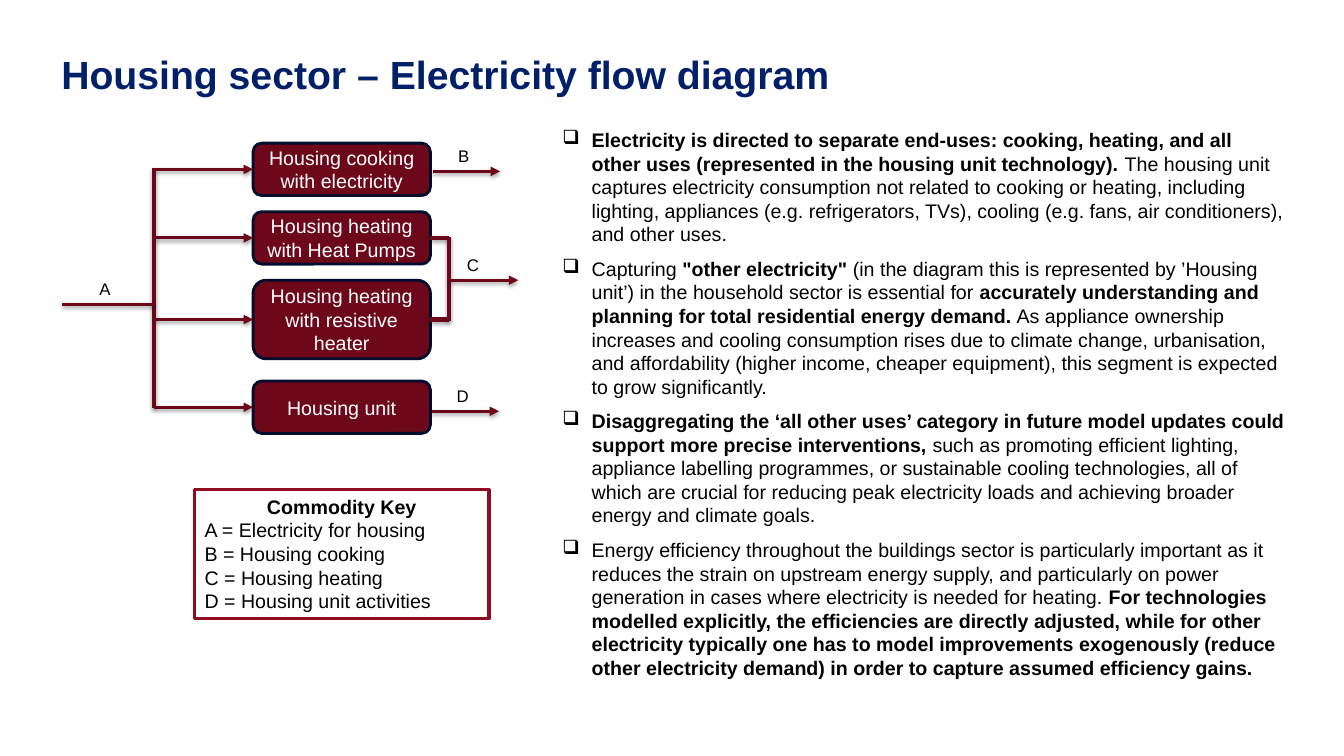
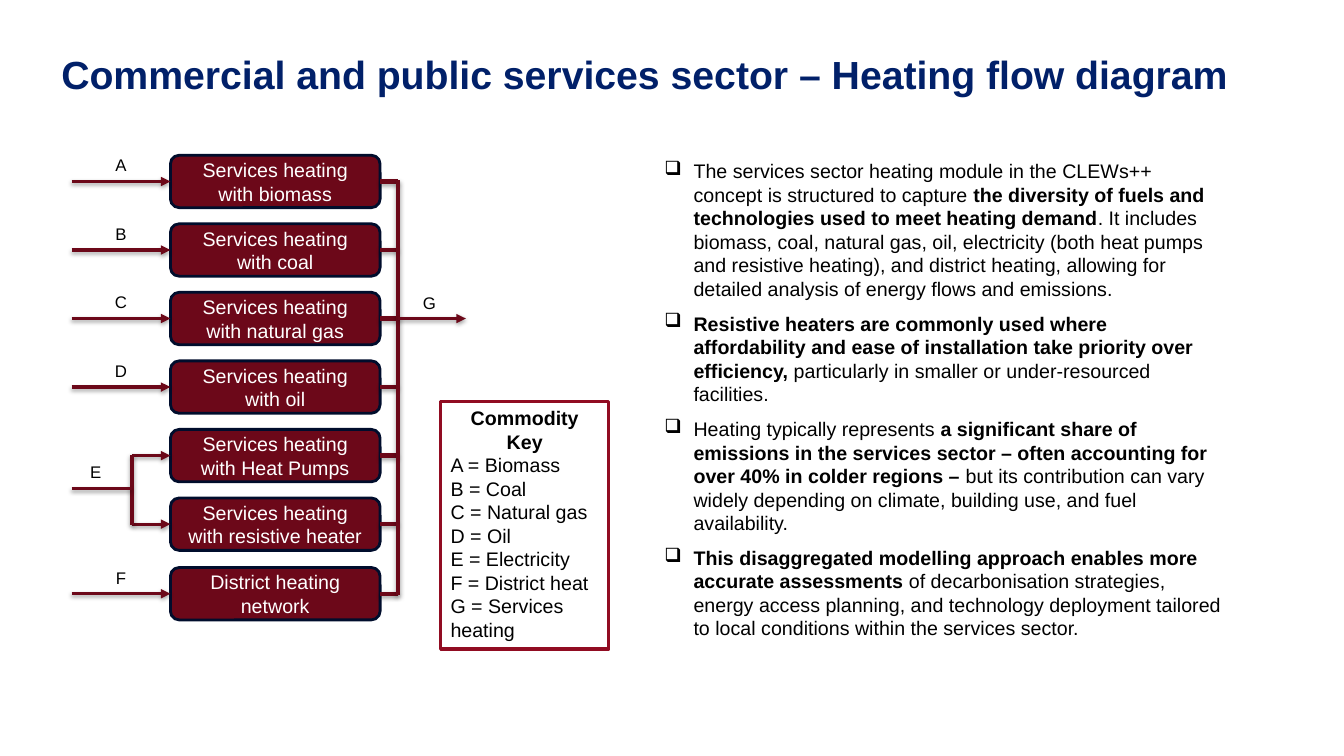
from dataclasses import dataclass
from typing import Optional

from lxml import etree
from pptx import Presentation
from pptx.dml.color import RGBColor
from pptx.enum.shapes import MSO_CONNECTOR, MSO_SHAPE
from pptx.enum.text import MSO_ANCHOR, MSO_AUTO_SIZE, PP_ALIGN
from pptx.oxml.ns import qn
from pptx.shapes.autoshape import Shape
from pptx.slide import Slide
from pptx.text.text import Font
from pptx.util import Emu, Pt

STRAIGHT = MSO_CONNECTOR.STRAIGHT
RECTANGLE, ROUNDED = MSO_SHAPE.RECTANGLE, MSO_SHAPE.ROUNDED_RECTANGLE
TOP, MIDDLE, BOTTOM = MSO_ANCHOR.TOP, MSO_ANCHOR.MIDDLE, MSO_ANCHOR.BOTTOM
CENTER, LEFT = PP_ALIGN.CENTER, PP_ALIGN.LEFT
GROW = MSO_AUTO_SIZE.SHAPE_TO_FIT_TEXT

# Shared style: 100 px to the inch
EMU_PER_PX = 9144
FONT = "Arial"
NAVY, BLACK, WHITE = "012069", "000000", "FFFFFF"
MAROON, BOX_EDGE, KEY_EDGE = "6C0819", "000D2C", "910C22"
LEFT_SIDE, RIGHT_SIDE = 1, 3
THIN, THICK = 2.25, 3
BOX_HEIGHT = 52
BULLET_INDENT = 29
KEY_TITLE = "Commodity Key"


@dataclass(frozen=True)
class Area:
    left: int
    top: int
    width: int
    height: int

    @property
    def right(self) -> int:
        return self.left + self.width

    @property
    def middle(self) -> int:
        return self.top + self.height // 2


@dataclass(frozen=True)
class Span:
    text: str
    bold: bool = False


@dataclass(frozen=True)
class Technology:
    name: str
    area: Area


@dataclass(frozen=True)
class Wire:
    start: tuple[int, int]
    end: tuple[int, int]
    arrow: bool = False
    weight: float = THIN


@dataclass(frozen=True)
class Label:
    text: str
    left: int
    top: int


def px(length: int) -> Emu:
    return Emu(length * EMU_PER_PX)


def color(value: str) -> RGBColor:
    return RGBColor.from_string(value)


def place(area: Area) -> tuple[Emu, Emu, Emu, Emu]:
    return px(area.left), px(area.top), px(area.width), px(area.height)


def style(font: Font, size: int, ink: str, bold: bool = False) -> None:
    font.name = FONT
    font.size = Pt(size)
    font.bold = bold
    font.color.rgb = color(ink)


def set_text(shape: Shape, text: str, size: int, ink: str, align: PP_ALIGN,
             anchor: MSO_ANCHOR, bold: bool = False) -> None:
    frame = shape.text_frame
    frame.word_wrap = True
    frame.vertical_anchor = anchor
    frame.text = text
    for para in frame.paragraphs:
        para.alignment = align
        for run in para.runs:
            style(run.font, size, ink, bold)


def add_title(page: Slide, text: str) -> None:
    title = page.shapes.add_textbox(*place(Area(51, 31, 1191, 71)))
    set_text(title, text, 28, NAVY, LEFT, BOTTOM, bold=True)
    title.text_frame.paragraphs[0].line_spacing = 0.9


def add_bullets(page: Slide, area: Area, points: list[list[Span]]) -> None:
    frame = page.shapes.add_textbox(*place(area)).text_frame
    frame.word_wrap = True
    frame.auto_size = GROW
    for index, point in enumerate(points):
        para = frame.paragraphs[0] if index == 0 else frame.add_paragraph()
        properties = para._p.get_or_add_pPr()
        properties.set("marL", str(px(BULLET_INDENT)))
        properties.set("indent", str(-px(BULLET_INDENT)))
        bullet_color = etree.SubElement(properties, qn("a:buClr"))
        etree.SubElement(bullet_color, qn("a:srgbClr"), val=BLACK)
        etree.SubElement(properties, qn("a:buChar"), char="❑")
        if index:
            para.space_before = Pt(8)
        for span in point:
            run = para.add_run()
            run.text = span.text
            style(run.font, 14, BLACK, span.bold)


def add_technology(page: Slide, technology: Technology) -> Shape:
    box = page.shapes.add_shape(ROUNDED, *place(technology.area))
    box.shadow.inherit = False
    box.fill.solid()
    box.fill.fore_color.rgb = color(MAROON)
    box.line.color.rgb = color(BOX_EDGE)
    box.line.width = Pt(2)
    set_text(box, technology.name, 14, WHITE, CENTER, MIDDLE)
    return box


def add_wire(page: Slide, wire: Wire, target: Optional[Shape] = None,
             side: int = LEFT_SIDE) -> None:
    x1, y1, x2, y2 = (px(value) for value in wire.start + wire.end)
    line = page.shapes.add_connector(STRAIGHT, x1, y1, x2, y2)
    line.line.color.rgb = color(MAROON)
    line.line.width = Pt(wire.weight)
    if wire.arrow:
        etree.SubElement(line.line._get_or_add_ln(), qn("a:tailEnd"), type="triangle")
    # Soft shadow straight below the line
    effects = etree.SubElement(line._element.spPr, qn("a:effectLst"))
    shadow = etree.SubElement(effects, qn("a:outerShdw"), blurRad=str(Pt(3.1)),
                              dist=str(Pt(1.6)), dir="5400000", rotWithShape="0")
    shade = etree.SubElement(shadow, qn("a:srgbClr"), val=BLACK)
    etree.SubElement(shade, qn("a:alpha"), val="37000")
    if target is not None:
        line.end_connect(target, side)


def add_label(page: Slide, label: Label) -> None:
    box = page.shapes.add_textbox(*place(Area(label.left, label.top, 72, 30)))
    set_text(box, label.text, 12, BLACK, CENTER, TOP)
    box.text_frame.auto_size = GROW


def add_key(page: Slide, area: Area, entries: list[str]) -> None:
    key = page.shapes.add_shape(RECTANGLE, *place(area))
    key.shadow.inherit = False
    key.fill.background()
    key.line.color.rgb = color(KEY_EDGE)
    key.line.width = Pt(THIN)
    set_text(key, "\n".join([KEY_TITLE, *entries]), 14, BLACK, LEFT, TOP)
    key.text_frame.auto_size = GROW
    heading = key.text_frame.paragraphs[0]
    heading.alignment = CENTER
    heading.runs[0].font.bold = True


def add_bus(page: Slide, x: int, first: Area, last: Area) -> None:
    add_wire(page, Wire((x, first.middle - 1), (x, last.middle + 1), weight=THICK))


def add_input(page: Slide, x: int, area: Area, box: Shape) -> None:
    add_wire(page, Wire((x, area.middle), (area.left, area.middle), arrow=True), box)


def add_stub(page: Slide, x: int, area: Area, box: Shape) -> None:
    wire = Wire((x, area.middle), (area.right, area.middle), weight=THICK)
    add_wire(page, wire, box, RIGHT_SIDE)


def build_housing(page: Slide) -> None:
    add_title(page, "Housing sector – Electricity flow diagram")
    add_bullets(page, Area(548, 122, 737, 562), [
        [Span("Electricity is directed to separate end-uses: cooking, heating, and all other uses "
              "(represented in the housing unit technology). ", True),
         Span("The housing unit captures electricity consumption not related to cooking or heating, "
              "including lighting, appliances (e.g. refrigerators, TVs), cooling (e.g. fans, air "
              "conditioners), and other uses.")],
        [Span("Capturing "), Span('"other electricity"', True),
         Span(" (in the diagram this is represented by ’Housing unit’) in the household sector is "
              "essential for "),
         Span("accurately understanding and planning for total residential energy demand.", True),
         Span(" As appliance ownership increases and cooling consumption rises due to climate "
              "change, urbanisation, and affordability (higher income, cheaper equipment), this "
              "segment is expected to grow significantly.")],
        [Span("Disaggregating the ‘all other uses’ category in future model updates could support "
              "more precise interventions,", True),
         Span(" such as promoting efficient lighting, appliance labelling programmes, or sustainable "
              "cooling technologies, all of which are crucial for reducing peak electricity loads "
              "and achieving broader energy and climate goals.")],
        [Span("Energy efficiency throughout the buildings sector is particularly important as it "
              "reduces the strain on upstream energy supply, and particularly on power generation "
              "in cases where electricity is needed for heating. "),
         Span("For technologies modelled explicitly, the efficiencies are directly adjusted, while "
              "for other electricity typically one has to model improvements exogenously (reduce "
              "other electricity demand) in order to capture assumed efficiency gains.", True)],
    ])

    # Technologies fed by one electricity bus
    technologies = [Technology(name, Area(251, top, 176, height)) for name, top, height in (
        ("Housing cooking with electricity", 142, BOX_HEIGHT),
        ("Housing heating with Heat Pumps", 210, BOX_HEIGHT),
        ("Housing heating with resistive heater", 278, 78),
        ("Housing unit", 378, BOX_HEIGHT))]
    areas = [technology.area for technology in technologies]
    boxes = [add_technology(page, technology) for technology in technologies]
    supply_x, heating_x = 153, 445
    for area, box in zip(areas, boxes):
        add_input(page, supply_x, area, box)
    add_bus(page, supply_x, areas[0], areas[-1])
    add_wire(page, Wire((62, 302), (supply_x, 302)))

    # Outputs, with both heaters merged
    for area, box in zip(areas[1:3], boxes[1:3]):
        add_stub(page, heating_x, area, box)
    add_bus(page, heating_x, areas[1], areas[2])
    for x, y in ((429, 170), (447, 278), (428, 408)):
        add_wire(page, Wire((x, y), (x + 67, y), arrow=True))
    for label in (Label("A", 68, 272), Label("B", 424, 140),
                  Label("C", 433, 248), Label("D", 423, 378)):
        add_label(page, label)
    add_key(page, Area(193, 486, 292, 128), [
        "A = Electricity for housing", "B = Housing cooking",
        "C = Housing heating", "D = Housing unit activities"])


def build_services(page: Slide) -> None:
    add_title(page, "Commercial and public services sector – Heating flow diagram")
    add_bullets(page, Area(649, 153, 575, 492), [
        [Span("The services sector heating module in the CLEWs++ concept is structured to capture "),
         Span("the diversity of fuels and technologies used to meet heating demand", True),
         Span(". It includes biomass, coal, natural gas, oil, electricity (both heat pumps and "
              "resistive heating), and district heating, allowing for detailed analysis of energy "
              "flows and emissions.")],
        [Span("Resistive heaters are commonly used where affordability and ease of installation "
              "take priority over efficiency,", True),
         Span(" particularly in smaller or under-resourced facilities.")],
        [Span("Heating typically represents "),
         Span("a significant share of emissions in the services sector – often accounting for over "
              "40% in colder regions – ", True),
         Span("but its contribution can vary widely depending on climate, building use, and fuel "
              "availability.")],
        [Span("This disaggregated modelling approach enables more accurate assessments", True),
         Span(" of decarbonisation strategies, energy access planning, and technology deployment "
              "tailored to local conditions within the services sector.")],
    ])
    add_key(page, Area(437, 398, 167, 246), [
        "A = Biomass", "B = Coal", "C = Natural gas", "D = Oil",
        "E = Electricity", "F = District heat", "G = Services heating"])

    # Seven evenly spaced technologies, all feeding the heating bus
    names = ("Services heating with biomass", "Services heating with coal",
             "Services heating with natural gas", "Services heating with oil",
             "Services heating with Heat Pumps", "Services heating with resistive heater",
             "District heating network")
    first_top, last_top = 154, 563
    steps = len(names) - 1
    areas = [Area(169, first_top + index * (last_top - first_top) // steps, 208, BOX_HEIGHT)
             for index in range(len(names))]
    inputs = ("A", "B", "C", "D", None, None, "F")
    supply_x, split_x, heating_x = 71, 131, 395
    for name, area, letter in zip(names, areas, inputs):
        box = add_technology(page, Technology(name, area))
        add_input(page, supply_x if letter else split_x, area, box)
        add_stub(page, heating_x, area, box)
        if letter:
            add_label(page, Label(letter, 84, area.top - 5))
    add_bus(page, heating_x, areas[0], areas[-1])
    add_wire(page, Wire((heating_x, 316), (462, 316), arrow=True))
    add_label(page, Label("G", 390, 286))

    # Electricity split between the two electric heaters
    add_bus(page, split_x, areas[4], areas[5])
    add_wire(page, Wire((supply_x, 485), (split_x, 485)))
    add_label(page, Label("E", 59, 453))


def main() -> None:
    deck = Presentation()
    deck.slide_width, deck.slide_height = px(1333), px(750)
    blank = deck.slide_layouts[6]
    for build in (build_housing, build_services):
        build(deck.slides.add_slide(blank))
    deck.save("out.pptx")


if __name__ == "__main__":
    main()
